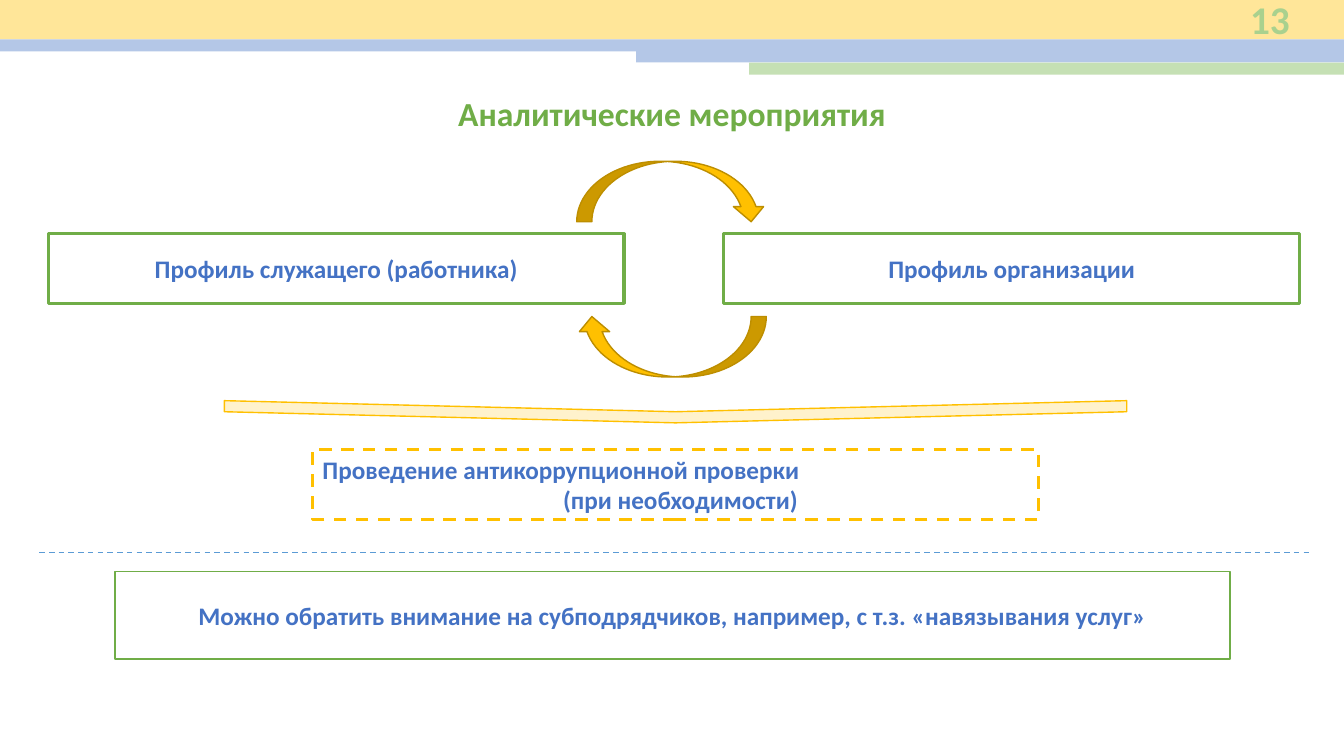
from pptx import Presentation
from pptx.dml.color import RGBColor
from pptx.enum.dml import MSO_LINE
from pptx.enum.shapes import MSO_CONNECTOR, MSO_SHAPE
from pptx.enum.text import MSO_ANCHOR, PP_ALIGN
from pptx.oxml.ns import qn
from pptx.util import Inches, Pt
from lxml import etree

RECT, CHEVRON = MSO_SHAPE.RECTANGLE, MSO_SHAPE.CHEVRON
CURVED_ARROW = MSO_SHAPE.CURVED_DOWN_ARROW
STRAIGHT, DASH = MSO_CONNECTOR.STRAIGHT, MSO_LINE.DASH
TOP, MIDDLE = MSO_ANCHOR.TOP, MSO_ANCHOR.MIDDLE
LEFT, CENTER, RIGHT = PP_ALIGN.LEFT, PP_ALIGN.CENTER, PP_ALIGN.RIGHT
FONT = "Calibri"
GREEN, BLUE, GOLD = "70AD47", "4472C4", "FFC000"


def rgb(value):
    """Turn a hex string into a colour."""
    return RGBColor.from_string(value)


def set_line(line, color, width, dash=None):
    """Style an outline or a connector line."""
    line.color.rgb = rgb(color)
    line.width = Pt(width)
    if dash:
        line.dash_style = dash


def write(shape, text, size, color, align=CENTER, anchor=MIDDLE):
    """Put bold text into a shape, one paragraph per line."""
    tf = shape.text_frame
    tf.word_wrap = True
    tf.vertical_anchor = anchor
    tf.margin_left = tf.margin_right = Inches(0.1)
    tf.margin_top = tf.margin_bottom = Inches(0.05)
    tf.text = text
    for p in tf.paragraphs:
        p.alignment = align
        for r in p.runs:
            r.font.name = FONT
            r.font.size = Pt(size)
            r.font.bold = True
            r.font.color.rgb = rgb(color)


def add_shape(s, kind, box, fill=None, line=None, width=1, dash=None, rotation=0):
    """Add a preset shape with an optional fill and outline."""
    sp = s.shapes.add_shape(kind, *map(Inches, box))
    sp.shadow.inherit = False
    sp.rotation = rotation
    if fill:
        sp.fill.solid()
        sp.fill.fore_color.rgb = rgb(fill)
    else:
        sp.fill.background()
    if line:
        set_line(sp.line, line, width, dash)
    else:
        sp.line.fill.background()
    return sp


def add_box(s, box, text, line, width, dash=None):
    """Add an outlined rectangle with blue text."""
    sp = add_shape(s, RECT, box, None, line, width, dash)
    write(sp, text, 18, BLUE)
    return sp


def add_header(s):
    """Add the coloured bands, the title and the slide number."""
    for box, fill in (
        ((0, 0, 13.33, 0.39), "FFE699"),
        ((0, 0.39, 13.33, 0.12), "B4C7E7"),
        ((6.31, 0.5, 7.02, 0.12), "B4C7E7"),
        ((7.43, 0.62, 5.9, 0.12), "C5E0B4"),
    ):
        add_shape(s, RECT, box, fill)
    title = s.shapes.title
    title.left, title.top = Inches(0.6), Inches(0.87)
    title.width, title.height = Inches(12.13), Inches(0.5)
    write(title, "Аналитические мероприятия", 24, GREEN, anchor=TOP)
    number = s.shapes.add_textbox(Inches(11.9), 0, Inches(0.99), Inches(0.38))
    write(number, "13", 28, "A9D18E", RIGHT)


def add_profiles(s):
    """Add the two profiles and the cycle between them."""
    for left, text in ((0.48, "Профиль служащего (работника)"),
                       (7.18, "Профиль организации")):
        add_box(s, (left, 2.32, 5.71, 0.69), text, GREEN, 2.25)
    for top, rotation in ((1.6, 0), (3.14, 180)):
        add_shape(s, CURVED_ARROW, (5.72, top, 1.88, 0.6), GOLD, "BD8E00",
                  rotation=rotation)


def add_check(s):
    """Add the pointer and the dashed box of the inspection."""
    add_shape(s, CHEVRON, (6.59, -0.39, 0.22, 8.95), "FFF2CC", GOLD, rotation=90)
    sp = add_box(s, (3.1, 4.46, 7.2, 0.69),
                 "Проведение антикоррупционной проверки\n(при необходимости)",
                 GOLD, 2.25, DASH)
    first, second = sp.text_frame.paragraphs
    first.alignment = LEFT
    second._p.get_or_add_pPr().set("marL", str(Inches(0.1)))


def add_divider(s, left, right, top):
    """Add a dashed horizontal line."""
    line = s.shapes.add_connector(STRAIGHT, *map(Inches, (left, top, right, top)))
    set_line(line.line, "5B9BD5", 1, DASH)
    etree.SubElement(line._element.spPr, qn("a:effectLst"))


def main():
    """Build and save the slide."""
    prs = Presentation()
    prs.slide_width, prs.slide_height = Inches(13.33), Inches(7.5)
    s = prs.slides.add_slide(prs.slide_layouts[5])
    add_header(s)
    add_profiles(s)
    add_check(s)
    add_box(s, (1.14, 5.67, 11.06, 0.87),
            "Можно обратить внимание на субподрядчиков, например, "
            "с т.з. «навязывания услуг»", GREEN, 1)
    add_divider(s, 0.39, 13, 5.48)
    prs.save("out.pptx")


if __name__ == "__main__":
    main()
